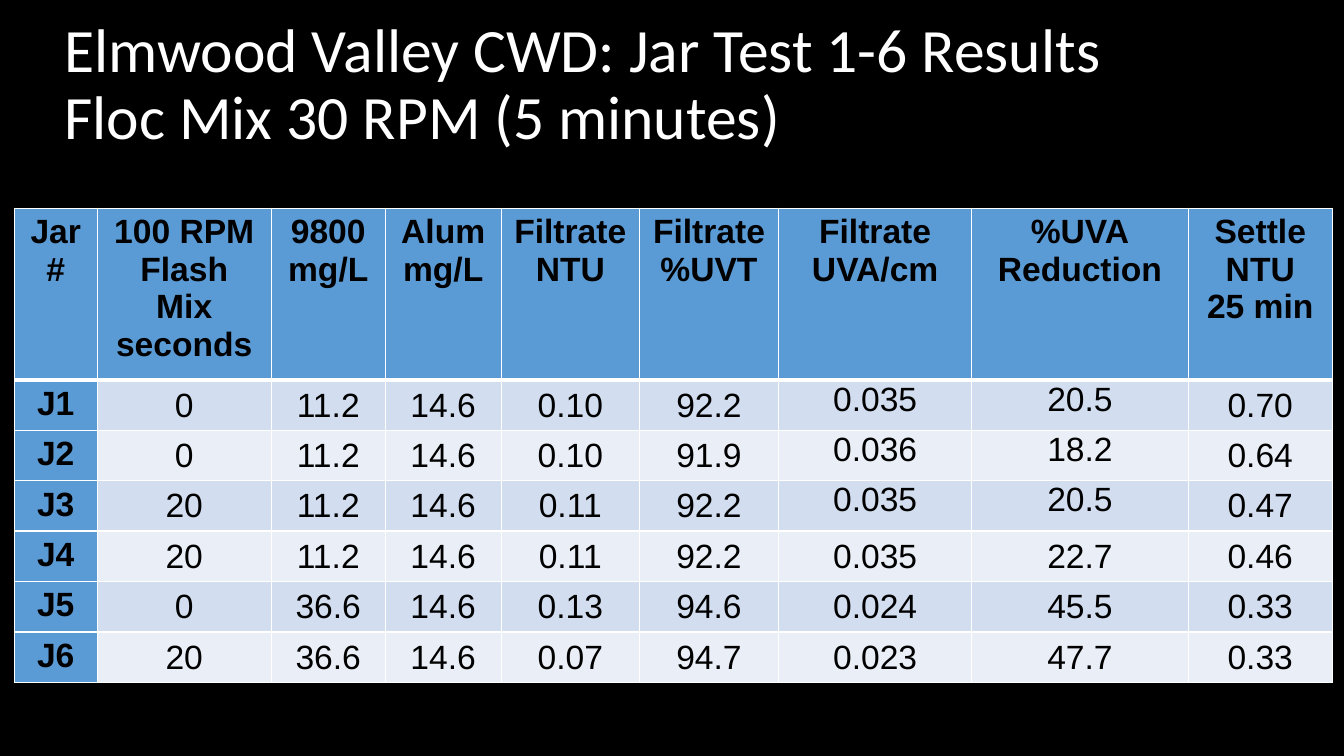
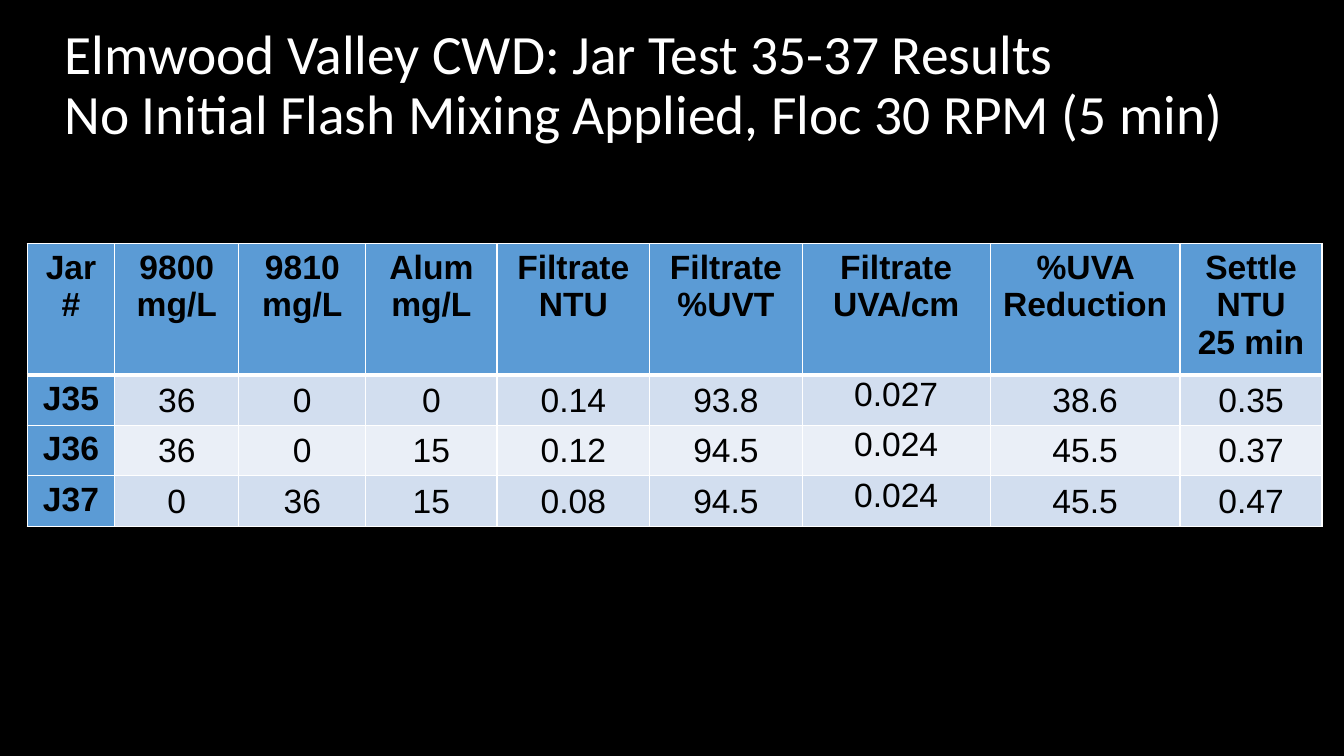
from lxml import etree
from pptx import Presentation
from pptx.dml.color import RGBColor
from pptx.enum.text import MSO_ANCHOR, PP_ALIGN
from pptx.oxml.ns import qn
from pptx.util import Pt

TOP, MIDDLE = MSO_ANCHOR.TOP, MSO_ANCHOR.MIDDLE
CENTER = PP_ALIGN.CENTER

# Theme: colours, fonts and sizes
THEME = {
    "back": "000000", "title": "FFFFFF", "line": "FFFFFF", "text": "000000",
    "head": "5B9BD5", "bands": ["D2DEEF", "EAEFF7"],
    "title font": "Calibri", "cell font": "Arial", "cell size": 24,
    "thin": 1, "thick": 3, "row": 34, "text line": 26.75, "pad": 7.2,
}
TIGHT = {"margin_left": Pt(0.72), "margin_right": Pt(0.72),
         "margin_top": Pt(0.72), "margin_bottom": Pt(0)}

# Slide data: in each table, "high" gives the (row, column) cells set at the top
SLIDES = [
    {
        "title": "Elmwood Valley CWD: Jar Test 1-6 Results\vFloc Mix 30 RPM (5 minutes)",
        "size": 44, "width": 855.36, "left": 10.2, "top": 148.8,
        "cols": [59.2, 124.4, 81.4, 82.8, 98.8, 99.4, 138, 154.6, 103],
        "head": ["Jar\n#", "100 RPM\nFlash\nMix\nseconds", "9800\nmg/L",
                 "Alum\nmg/L", "Filtrate\nNTU", "Filtrate\n%UVT",
                 "Filtrate\nUVA/cm", "%UVA\nReduction", "Settle\nNTU\n25 min"],
        "rows": [
            ["J1", "0", "11.2", "14.6", "0.10", "92.2", "0.035", "20.5", "0.70"],
            ["J2", "0", "11.2", "14.6", "0.10", "91.9", "0.036", "18.2", "0.64"],
            ["J3", "20", "11.2", "14.6", "0.11", "92.2", "0.035", "20.5", "0.47"],
            ["J4", "20", "11.2", "14.6", "0.11", "92.2", "0.035", "22.7", "0.46"],
            ["J5", "0", "36.6", "14.6", "0.13", "94.6", "0.024", "45.5", "0.33"],
            ["J6", "20", "36.6", "14.6", "0.07", "94.7", "0.023", "47.7", "0.33"],
        ],
        "high": [(r, c) for r in (1, 2, 3) for c in (6, 7)],
    },
    {
        "title": "Elmwood Valley CWD: Jar Test 35-37 Results\v"
                 "No Initial Flash Mixing Applied, Floc 30 RPM (5 min)",
        "size": 39.6, "width": 889.2, "left": 19.4, "top": 174.2,
        "cols": [62.6, 88.6, 90.8, 93.6, 109.2, 108.8, 134.4, 135.6, 101.4],
        "head": ["Jar\n#", "9800\nmg/L", "9810\nmg/L", "Alum\nmg/L",
                 "Filtrate\nNTU", "Filtrate\n%UVT", "Filtrate\nUVA/cm",
                 "%UVA Reduction", "Settle\nNTU\n25 min"],
        "rows": [
            ["J35", "36", "0", "0", "0.14", "93.8", "0.027", "38.6", "0.35"],
            ["J36", "36", "0", "15", "0.12", "94.5", "0.024", "45.5", "0.37"],
            ["J37", "0", "36", "15", "0.08", "94.5", "0.024", "45.5", "0.47"],
        ],
        "high": [(r, 6) for r in (1, 2, 3)],
    },
]


def style(para, name, size, color, bold=False):
    look = {"name": name, "size": Pt(size), "bold": bold}
    for run in para.runs:
        for key, value in look.items():
            setattr(run.font, key, value)
        run.font.color.rgb = RGBColor.from_string(color)


def border(cell, row):
    props = cell._tc.get_or_add_tcPr()
    heavy = {0: "lnB", 1: "lnT"}.get(row)
    for side in ("lnL", "lnR", "lnT", "lnB"):
        width = THEME["thick" if side == heavy else "thin"]
        line = etree.SubElement(props, qn("a:" + side), w=str(Pt(width)))
        fill = etree.SubElement(line, qn("a:solidFill"))
        etree.SubElement(fill, qn("a:srgbClr"), val=THEME["line"])


# Deck with a shared background
deck = Presentation()
deck.slide_width, deck.slide_height = Pt(960), Pt(540)
back = deck.slide_master.background.fill
back.solid()
back.fore_color.rgb = RGBColor.from_string(THEME["back"])

for data in SLIDES:
    slide = deck.slides.add_slide(deck.slide_layouts[6])

    # Title
    box = slide.shapes.add_textbox(Pt(38.9), Pt(9.4), Pt(data["width"]), Pt(104.4))
    frame = box.text_frame
    frame.word_wrap = True
    frame.vertical_anchor = MIDDLE
    para = frame.paragraphs[0]
    para.text = data["title"]
    para.line_spacing = 0.9
    style(para, THEME["title font"], data["size"], THEME["title"])

    # Table grid
    grid = [data["head"]] + data["rows"]
    lines = max(text.count("\n") + 1 for text in data["head"])
    tall = THEME["text line"] * lines + THEME["pad"]
    highs = [tall] + [THEME["row"]] * len(data["rows"])
    table = slide.shapes.add_table(
        len(grid), len(data["cols"]), Pt(data["left"]), Pt(data["top"]),
        Pt(sum(data["cols"])), Pt(sum(highs))).table
    for col, width in zip(table.columns, data["cols"]):
        col.width = Pt(width)
    for row, high in zip(table.rows, highs):
        row.height = Pt(high)

    # Table cells
    for r, texts in enumerate(grid):
        for c, text in enumerate(texts):
            cell = table.cell(r, c)
            label = r == 0 or c == 0
            cell.text = text
            border(cell, r)
            color = THEME["head"] if label else THEME["bands"][(r - 1) % 2]
            cell.fill.solid()
            cell.fill.fore_color.rgb = RGBColor.from_string(color)
            cell.vertical_anchor = TOP if label or (r, c) in data["high"] else MIDDLE
            if not label:
                for key, value in TIGHT.items():
                    setattr(cell, key, value)
            for para in cell.text_frame.paragraphs:
                para.alignment = CENTER
                style(para, THEME["cell font"], THEME["cell size"], THEME["text"], label)

deck.save("out.pptx")
